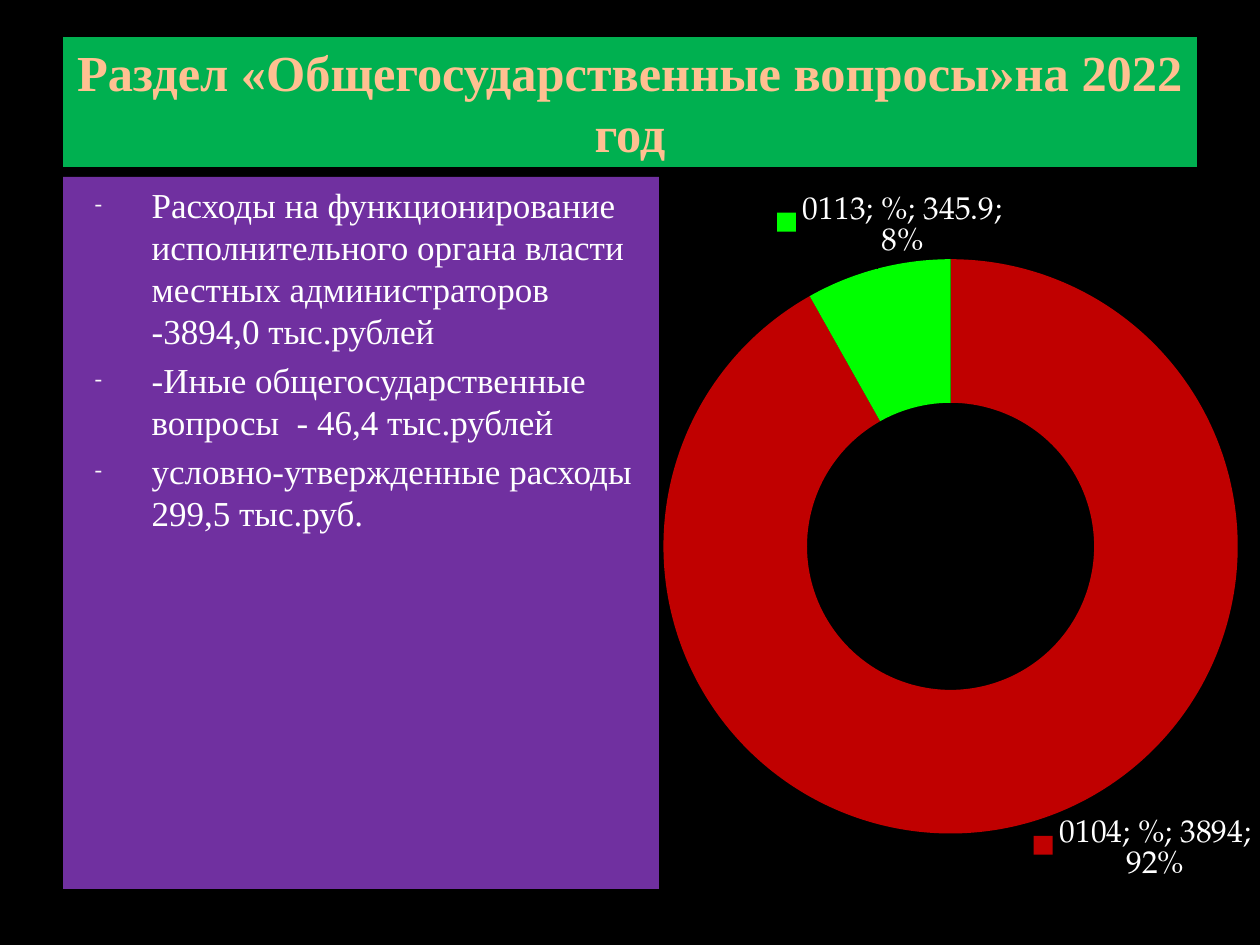
from pptx import Presentation
from pptx.chart.data import CategoryChartData
from pptx.dml.color import RGBColor
from pptx.enum.chart import XL_CHART_TYPE as ChartType
from pptx.enum.text import MSO_ANCHOR as Anchor, PP_ALIGN as Align
from pptx.oxml import parse_xml
from pptx.oxml.ns import nsdecls, qn
from pptx.util import Emu, Pt

PX = 914400 // 126
BLACK = RGBColor(0, 0, 0)
WHITE = RGBColor(255, 255, 255)
GREEN = RGBColor(0x00, 0xB0, 0x50)
PURPLE = RGBColor(0x70, 0x30, 0xA0)
PEACH = RGBColor(0xFF, 0xC0, 0x91)
RED = RGBColor(0xC0, 0x00, 0x00)
LIME = RGBColor(0x00, 0xFF, 0x00)

TEXT_FONT = "Times New Roman"
CHART_FONT = "TeX Gyre Pagella"
TITLE = "Раздел «Общегосударственные вопросы»на 2022 год"
EXPENSES = [
    "Расходы на функционирование исполнительного органа власти местных "
    "администраторов -3894,0 тыс.рублей",
    "-Иные общегосударственные вопросы  - 46,4 тыс.рублей",
    "условно-утвержденные расходы  299,5 тыс.руб.",
]
# category, value, colour, label shift as a share of the chart
SECTORS = [
    ("0104", 3894, RED, (0.22, 0.14)),
    ("0113", 345.9, LIME, (-0.01, -0.16)),
]


def px(*lengths):
    return [Emu(length * PX) for length in lengths]


def fill_placeholder(box, place, lines, fill, size, color, bold, anchor):
    box.left, box.top, box.width, box.height = px(*place)
    box.fill.solid()
    box.fill.fore_color.rgb = fill
    frame = box.text_frame
    frame.text = "\n".join(lines)
    frame.word_wrap = True
    frame.vertical_anchor = anchor
    for para in frame.paragraphs:
        for span in para.runs:
            font = span.font
            font.name, font.size, font.bold = TEXT_FONT, Pt(size), bold
            font.color.rgb = color


def add_dash(para):
    """Give the paragraph a small hanging dash as its bullet."""
    para.space_before = Pt(4)
    props = para._p.get_or_add_pPr()
    indent, = px(57)
    margin, = px(76)
    props.set("marL", str(margin))
    props.set("indent", str(-indent))
    for bullet in (
        '<a:buClr {}><a:srgbClr val="F9F9F9"/></a:buClr>',
        '<a:buSzPct {} val="65000"/>',
        '<a:buFont {} typeface="Times New Roman"/>',
        '<a:buChar {} char="-"/>',
    ):
        props.append(parse_xml(bullet.format(nsdecls("a"))))


def set_plot_layout(chart, x, y, width, height):
    area = chart._chartSpace.chart.plotArea
    for old in area.findall(qn("c:layout")):
        area.remove(old)
    area.insert(0, parse_xml(
        f'<c:layout {nsdecls("c")}><c:manualLayout><c:layoutTarget val="inner"/>'
        f'<c:xMode val="edge"/><c:yMode val="edge"/><c:x val="{x}"/><c:y val="{y}"/>'
        f'<c:w val="{width}"/><c:h val="{height}"/></c:manualLayout></c:layout>'))


def shifted_label(index, shift):
    x, y = shift
    shows = "".join(
        f'<c:show{part} val="{value}"/>' for part, value in (
            ("LegendKey", 1), ("Val", 1), ("CatName", 1),
            ("SerName", 1), ("Percent", 1), ("BubbleSize", 0)))
    return parse_xml(
        f'<c:dLbl {nsdecls("c")}><c:idx val="{index}"/><c:layout><c:manualLayout>'
        f'<c:x val="{x}"/><c:y val="{y}"/></c:manualLayout></c:layout>'
        f'{shows}<c:separator>; </c:separator></c:dLbl>')


def add_doughnut(page, place):
    data = CategoryChartData()
    data.categories = [sector[0] for sector in SECTORS]
    data.add_series("%", [sector[1] for sector in SECTORS])
    chart = page.shapes.add_chart(ChartType.DOUGHNUT, *px(*place), data).chart
    chart.has_legend = chart.has_title = False
    chart.font.name, chart.font.size = CHART_FONT, Pt(18)
    chart.font.color.rgb = WHITE
    set_plot_layout(chart, 0.01, 0.09, 0.99, 0.83)

    plot = chart.plots[0]
    plot.vary_by_categories = True
    series = plot.series[0]
    labels = series.data_labels
    labels.show_legend_key = labels.show_value = labels.show_percentage = True
    labels.show_category_name = labels.show_series_name = True
    label_list = series._element.find(qn("c:dLbls"))
    for index, (_, _, color, shift) in enumerate(SECTORS):
        fill = series.points[index].format.fill
        fill.solid()
        fill.fore_color.rgb = color
        label_list.insert(index, shifted_label(index, shift))


def main():
    deck = Presentation()
    deck.slide_width, deck.slide_height = px(1260, 945)
    page = deck.slides.add_slide(deck.slide_layouts[1])
    page.background.fill.solid()
    page.background.fill.fore_color.rgb = BLACK

    title, body = page.placeholders
    fill_placeholder(title, (63, 37, 1134, 130), [TITLE], GREEN, 28.8, PEACH,
                     True, Anchor.MIDDLE)
    title.text_frame.paragraphs[0].alignment = Align.CENTER
    fill_placeholder(body, (63, 177, 596, 712), EXPENSES, PURPLE, 20, WHITE,
                     False, Anchor.TOP)
    for para in body.text_frame.paragraphs:
        add_dash(para)
    add_doughnut(page, (635, 197, 625, 692))
    deck.save("out.pptx")


if __name__ == "__main__":
    main()
